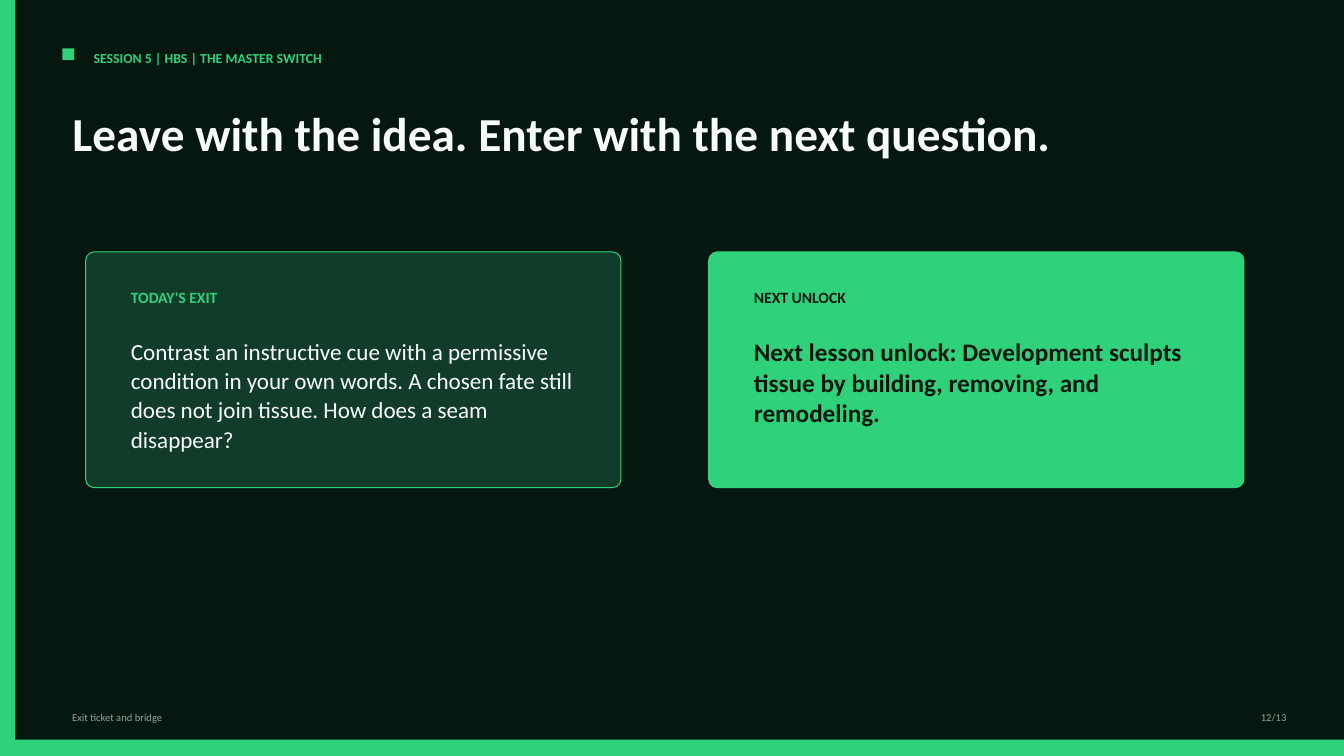
from dataclasses import dataclass

from pptx import Presentation
from pptx import util as u
from pptx.dml.color import RGBColor
from pptx.enum import shapes, text


@dataclass(frozen=True)
class Theme:
    """Colours, font and type sizes of the lesson deck."""
    night: str = "06170F"
    green: str = "2FD27A"
    forest: str = "123C2A"
    white: str = "F7FCF9"
    sage: str = "87AB9A"
    font: str = "Calibri"
    title: float = 33.8
    prompt: float = 16.5
    unlock: float = 18
    label: float = 11.2
    header: float = 9.8
    footer: float = 7.5


class SlideBuilder:
    """Draws themed elements on the current slide, with lengths in centimetres."""

    def __init__(self, deck, theme):
        """Add a title-only page with the theme background."""
        self.theme = theme
        self.page = deck.slides.add_slide(deck.slide_layouts[5])
        self.paint(self.page.background.fill, theme.night)

    def paint(self, fill, colour):
        """Make a fill solid in one colour."""
        fill.solid()
        fill.fore_color.rgb = RGBColor.from_string(colour)

    def set_text(self, box, words, size, colour, bold=False, spacing=None,
                 align=text.PP_ALIGN.LEFT):
        """Put one formatted run into a box."""
        frame = box.text_frame
        frame.word_wrap = True
        frame.auto_size = text.MSO_AUTO_SIZE.NONE
        frame.vertical_anchor = text.MSO_ANCHOR.TOP
        para = frame.paragraphs[0]
        para.alignment = align
        if spacing:
            para.line_spacing = spacing
        span = para.add_run()
        span.text = words
        span.font.name = self.theme.font
        span.font.size = u.Pt(size)
        span.font.bold = bold
        span.font.color.rgb = RGBColor.from_string(colour)

    def title(self, words, left, top, width, height):
        """Move and fill the title placeholder."""
        box = self.page.shapes.title
        box.left, box.top = u.Cm(left), u.Cm(top)
        box.width, box.height = u.Cm(width), u.Cm(height)
        self.set_text(box, words, self.theme.title, self.theme.white, True, 0.92)

    def label(self, words, left, top, width, height, size, colour, **style):
        """Add a text box."""
        box = self.page.shapes.add_textbox(*map(u.Cm, (left, top, width, height)))
        self.set_text(box, words, size, colour, **style)

    def block(self, left, top, width, height, fill, radius=None):
        """Add a plain bar, or an outlined rounded panel when a radius is given."""
        preset = shapes.MSO_SHAPE
        kind = preset.ROUNDED_RECTANGLE if radius else preset.RECTANGLE
        box = self.page.shapes.add_shape(kind, *map(u.Cm, (left, top, width, height)))
        box.shadow.inherit = False
        self.paint(box.fill, fill)
        if radius:
            box.adjustments[0] = radius
            self.paint(box.line.fill, self.theme.green)
            box.line.width = u.Pt(0.75)
        else:
            box.line.fill.background()

    def card(self, left, fill, heading, heading_colour, words, size, colour, **style):
        """Add a rounded card with a small heading and a message."""
        inner = left + 0.89
        self.block(left, 6.35, 13.49, 5.94, fill, radius=0.036)
        self.label(heading, inner, 7.14, 5.8, 0.66, self.theme.label,
                   heading_colour, bold=True)
        self.label(words, inner, 8.33, 11.91, 2.92, size, colour, **style)


def main():
    """Build the exit ticket slide."""
    theme = Theme()
    deck = Presentation()
    deck.slide_width, deck.slide_height = u.Cm(33.87), u.Cm(19.05)
    slide = SlideBuilder(deck, theme)

    for bar in ((0, 0, 0.38, 19.05), (0, 18.64, 33.87, 0.41), (1.57, 1.22, 0.3, 0.3)):
        slide.block(*bar, theme.green)

    slide.label("SESSION 5 | HBS | THE MASTER SWITCH", 2.11, 1.14, 16.41, 0.64,
                theme.header, theme.green, bold=True)
    slide.title("Leave with the idea. Enter with the next question.",
                1.57, 2.64, 29.11, 2.24)

    slide.card(2.16, theme.forest, "TODAY'S EXIT", theme.green,
               "Contrast an instructive cue with a permissive condition in your own "
               "words. A chosen fate still does not join tissue. How does a seam "
               "disappear?", theme.prompt, theme.white, spacing=1.06)
    slide.card(17.86, theme.green, "NEXT UNLOCK", theme.night,
               "Next lesson unlock: Development sculpts tissue by building, removing, "
               "and remodeling.", theme.unlock, theme.night, bold=True, spacing=1.02)

    slide.label("Exit ticket and bridge", 1.57, 17.78, 23.83, 0.48,
                theme.footer, theme.sage)
    slide.label("12/13", 30.56, 17.78, 2.11, 0.48, theme.footer, theme.sage,
                align=text.PP_ALIGN.RIGHT)
    deck.save("out.pptx")


if __name__ == "__main__":
    main()
